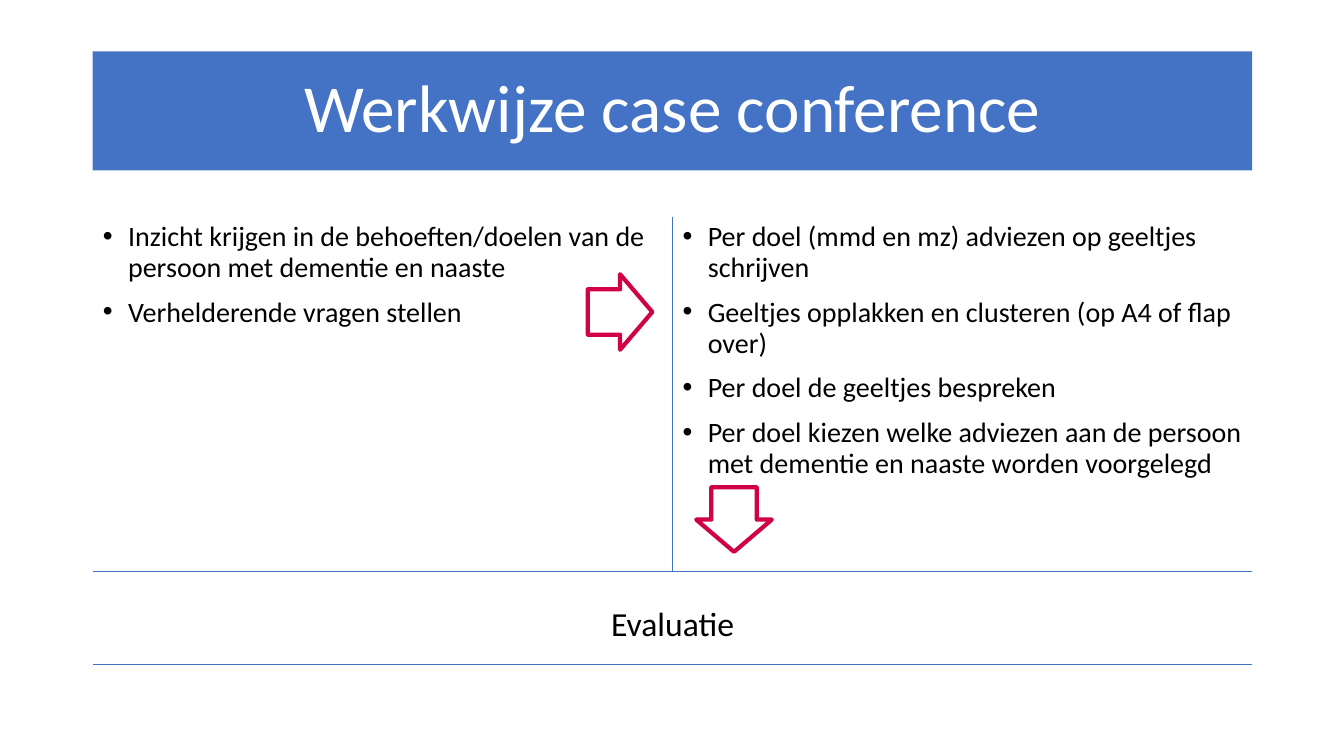
from dataclasses import dataclass
from lxml import etree
from pptx import Presentation, util as u
from pptx.dml.color import RGBColor
from pptx.enum import shapes, text
from pptx.oxml import ns

TITLE = "Werkwijze case conference"
STEPS = [
    ["Inzicht krijgen in de behoeften/doelen van de persoon met dementie en naaste",
     "Verhelderende vragen stellen"],
    ["Per doel (mmd en mz) adviezen op geeltjes schrijven",
     "Geeltjes opplakken en clusteren (op A4 of flap over)",
     "Per doel de geeltjes bespreken",
     "Per doel kiezen welke adviezen aan de persoon met dementie en naaste worden voorgelegd"],
]
CLOSING = "Evaluatie"
ARROWS = [(5.83, 2.72, 0), (6.96, 4.78, 90)]
ARROW_SIZE = (0.64, 0.75)
WIDTH, HEIGHT = 13.33, 7.5
LEFT, CONTENT = 0.92, 11.5
TITLE_TOP, TITLE_HEIGHT = 0.51, 1.18
TABLE_TOP, ROWS = 2.15, (3.52, 0.92)


@dataclass(frozen=True)
class Theme:
    font: str = "Calibri"
    blue: str = "4472C4"
    red: str = "D00243"
    white: str = "FFFFFF"
    black: str = "000000"
    title: int = 48
    body: int = 20
    closing: int = 24


T = Theme()


def write(tf, lines, size, color=T.black, bullet=False, before=0):
    tf.word_wrap = True
    for i, line in enumerate(lines):
        p = tf.paragraphs[0] if i == 0 else tf.add_paragraph()
        p.alignment = text.PP_ALIGN.LEFT if bullet else text.PP_ALIGN.CENTER
        p.line_spacing = 0.9
        p.space_before = u.Pt(before)
        if bullet:
            pr = p._p.get_or_add_pPr()
            pr.set("marL", str(u.Inches(0.25)))
            pr.set("indent", str(-u.Inches(0.25)))
            etree.SubElement(pr, ns.qn("a:buFont"), typeface="Arial")
            etree.SubElement(pr, ns.qn("a:buChar"), char="•")
        r = p.add_run()
        r.text = line
        r.font.name = T.font
        r.font.size = u.Pt(size)
        r.font.color.rgb = RGBColor.from_string(color)


def add_box(s, kind, box, fill, line=None):
    sp = s.shapes.add_shape(kind, *map(u.Inches, box))
    sp.shadow.inherit = False
    sp.fill.solid()
    sp.fill.fore_color.rgb = RGBColor.from_string(fill)
    if line:
        sp.line.color.rgb = RGBColor.from_string(line)
        sp.line.width = u.Pt(3)
    else:
        sp.line.fill.background()
    return sp


def style_cell(cell, sides):
    pr = cell._tc.get_or_add_tcPr()
    for side in "LRTB":
        ln = etree.SubElement(pr, ns.qn(f"a:ln{side}"), w=str(u.Pt(1)))
        if side in sides:
            fill = etree.SubElement(ln, ns.qn("a:solidFill"))
            etree.SubElement(fill, ns.qn("a:srgbClr"), val=T.blue)
        else:
            etree.SubElement(ln, ns.qn("a:noFill"))
    cell.fill.background()


def add_steps(s):
    box = (LEFT, TABLE_TOP, CONTENT, sum(ROWS))
    table = s.shapes.add_table(len(ROWS), len(STEPS), *map(u.Inches, box)).table
    table.first_row = table.horz_banding = False
    for row, height in zip(table.rows, ROWS):
        row.height = u.Inches(height)
    for col, lines in enumerate(STEPS):
        table.columns[col].width = u.Inches(CONTENT / len(STEPS))
        cell = table.cell(0, col)
        style_cell(cell, ("RB", "LB")[col])
        write(cell.text_frame, lines, T.body, bullet=True, before=10)
        style_cell(table.cell(1, col), "TB")
    closing = table.cell(1, 0)
    closing.merge(table.cell(1, len(STEPS) - 1))
    closing.vertical_anchor = text.MSO_ANCHOR.MIDDLE
    closing.margin_top = u.Inches(0.2)
    write(closing.text_frame, [CLOSING], T.closing)


def main():
    prs = Presentation()
    prs.slide_width, prs.slide_height = u.Inches(WIDTH), u.Inches(HEIGHT)
    s = prs.slides.add_slide(prs.slide_layouts[6])
    banner = add_box(s, shapes.MSO_SHAPE.RECTANGLE,
                     (LEFT, TITLE_TOP, CONTENT, TITLE_HEIGHT), T.blue)
    banner.text_frame.vertical_anchor = text.MSO_ANCHOR.MIDDLE
    write(banner.text_frame, [TITLE], T.title, color=T.white)
    add_steps(s)
    for left, top, turn in ARROWS:
        arrow = add_box(s, shapes.MSO_SHAPE.RIGHT_ARROW,
                        (left, top, *ARROW_SIZE), T.white, T.red)
        arrow.adjustments[0], arrow.adjustments[1] = 0.6, 0.5
        arrow.rotation = turn
    prs.save("out.pptx")


if __name__ == "__main__":
    main()
